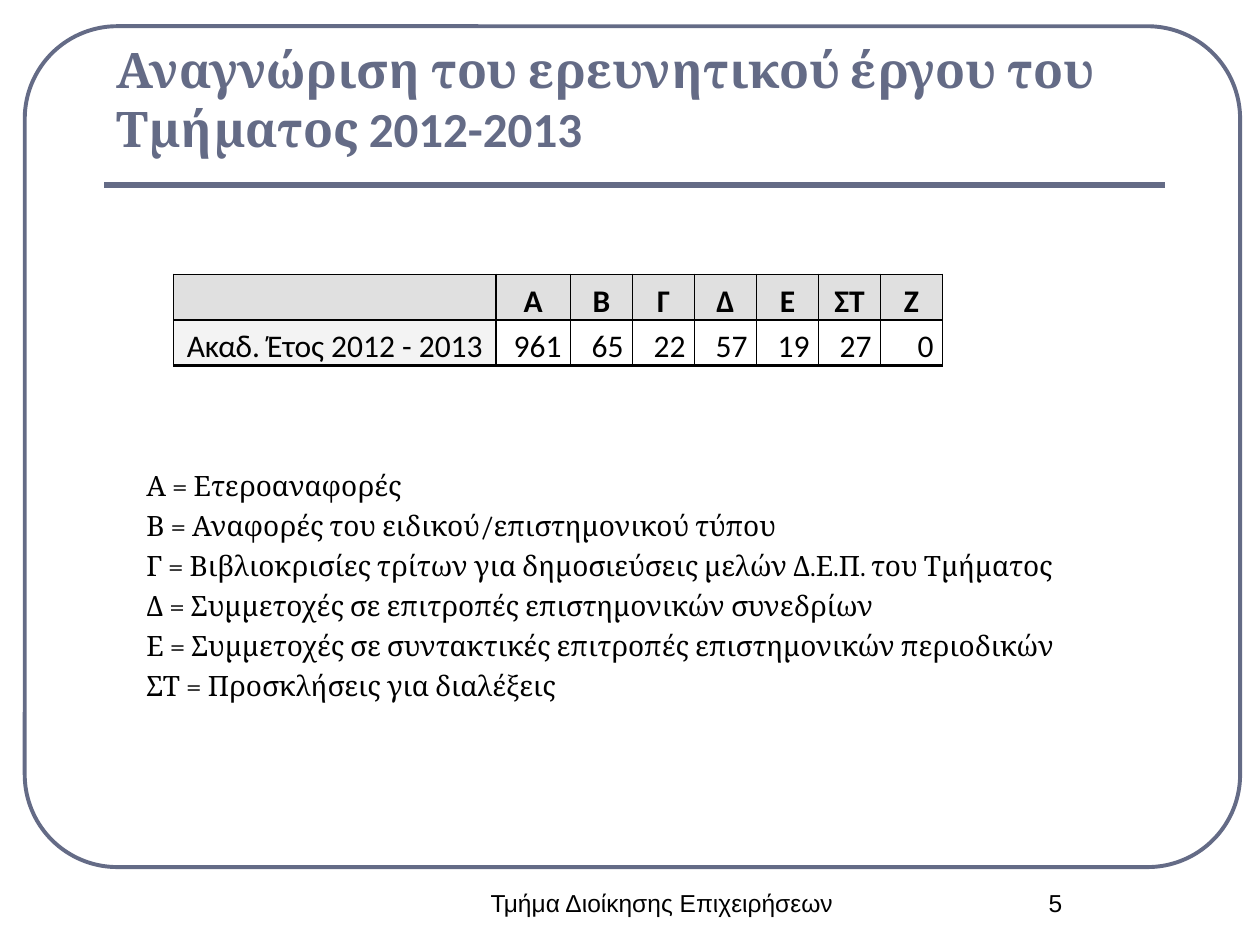
from lxml import etree
from pptx import Presentation
from pptx.dml.color import RGBColor
from pptx.enum.shapes import MSO_CONNECTOR, MSO_SHAPE
from pptx.enum.text import MSO_ANCHOR, PP_ALIGN
from pptx.oxml.ns import qn
from pptx.util import Cm, Pt

SLATE = RGBColor(0x64, 0x6B, 0x86)
BLACK = RGBColor(0, 0, 0)
HEADER_GREY = RGBColor(0xE0, 0xE0, 0xE0)
LABEL_GREY = RGBColor(0xF3, 0xF3, 0xF3)
WHITE = RGBColor(0xFF, 0xFF, 0xFF)
LEFT, CENTER, RIGHT = PP_ALIGN.LEFT, PP_ALIGN.CENTER, PP_ALIGN.RIGHT
TOP, MIDDLE, BOTTOM = MSO_ANCHOR.TOP, MSO_ANCHOR.MIDDLE, MSO_ANCHOR.BOTTOM

HEADERS = ["", "Α", "Β", "Γ", "Δ", "Ε", "ΣΤ", "Ζ"]
VALUES = ["Ακαδ. Έτος 2012 - 2013", "961", "65", "22", "57", "19", "27", "0"]
COL_WIDTHS = [6.5, 1.5] + [1.25] * 6
LEGEND = [
    "Α = Ετεροαναφορές",
    "Β = Αναφορές του ειδικού/επιστημονικού τύπου",
    "Γ = Βιβλιοκρισίες τρίτων για δημοσιεύσεις μελών Δ.Ε.Π. του Τμήματος",
    "Δ = Συμμετοχές σε επιτροπές επιστημονικών συνεδρίων",
    "Ε = Συμμετοχές σε συντακτικές επιτροπές επιστημονικών περιοδικών",
    "ΣΤ = Προσκλήσεις για διαλέξεις",
]


def add_text(p, text, font="Arial", size=14, color=BLACK, bold=False, align=LEFT,
             before=0, after=0, spacing=1.0):
    p.alignment = align
    p.space_before, p.space_after = Pt(before), Pt(after)
    p.line_spacing = spacing
    r = p.add_run()
    r.text = text
    r.font.name, r.font.size = font, Pt(size)
    r.font.bold, r.font.color.rgb = bold, color


def set_borders(cell, bottom):
    """Draw black cell borders, 1 pt except for the bottom one."""
    tc_pr = cell._tc.get_or_add_tcPr()
    for i, side in enumerate("LRTB"):
        width = bottom if side == "B" else 1
        ln = etree.Element(qn(f"a:ln{side}"), w=str(Pt(width)))
        fill = etree.SubElement(ln, qn("a:solidFill"))
        etree.SubElement(fill, qn("a:srgbClr"), val=str(BLACK))
        tc_pr.insert(i, ln)


class SlideBuilder:
    """Places styled elements on one slide; lengths are centimetres."""

    def __init__(self, slide, accent):
        self.shapes = slide.shapes
        self.accent = accent

    def frame(self, x, y, w, h, radius, weight):
        sp = self.shapes.add_shape(MSO_SHAPE.ROUNDED_RECTANGLE, Cm(x), Cm(y), Cm(w), Cm(h))
        sp.adjustments[0] = radius
        sp.shadow.inherit = False
        sp.fill.background()
        sp.line.color.rgb, sp.line.width = self.accent, Pt(weight)

    def rule(self, x1, x2, y, weight):
        line = self.shapes.add_connector(MSO_CONNECTOR.STRAIGHT, Cm(x1), Cm(y), Cm(x2), Cm(y))
        line.line.color.rgb, line.line.width = self.accent, Pt(weight)
        etree.SubElement(line._element.spPr, qn("a:effectLst"))

    def textbox(self, x, y, w, h, anchor=TOP):
        tf = self.shapes.add_textbox(Cm(x), Cm(y), Cm(w), Cm(h)).text_frame
        tf.word_wrap = True
        tf.vertical_anchor = anchor
        return tf

    def title(self, x, y, w, h, parts):
        p = self.textbox(x, y, w, h, BOTTOM).paragraphs[0]
        for text, font in parts:
            add_text(p, text, font=font, size=28, color=self.accent, bold=True)

    def legend(self, x, y, w, h, lines):
        tf = self.textbox(x, y, w, h)
        for i, text in enumerate(lines):
            p = tf.add_paragraph() if i else tf.paragraphs[0]
            add_text(p, text, font="Cambria", size=16, before=3.7)
            p_pr = p._p.get_or_add_pPr()
            p_pr.set("marL", str(Cm(0.95)))
            p_pr.set("indent", str(-Cm(0.95)))

    def footer(self, x, y, w, h, text):
        add_text(self.textbox(x, y, w, h).paragraphs[0], text, align=CENTER)

    def cell(self, cell, text, fill, anchor, bottom, **text_format):
        cell.fill.solid()
        cell.fill.fore_color.rgb = fill
        cell.vertical_anchor = anchor
        cell.margin_left = cell.margin_right = Cm(0.18)
        cell.margin_top = cell.margin_bottom = 0
        set_borders(cell, bottom)
        if text:
            add_text(cell.text_frame.paragraphs[0], text, font="Calibri", size=18,
                     spacing=1.2, **text_format)

    def table(self, x, y, h, widths, headers, values):
        table = self.shapes.add_table(2, len(widths), Cm(x), Cm(y),
                                      Cm(sum(widths)), Cm(h)).table
        for i, (width, header, value) in enumerate(zip(widths, headers, values)):
            table.columns[i].width = Cm(width)
            self.cell(table.cell(0, i), header, HEADER_GREY, MIDDLE, 1,
                      bold=True, align=CENTER, before=2, after=2)
            if i == 0:
                self.cell(table.cell(1, i), value, LABEL_GREY, TOP, 1.5,
                          align=CENTER, before=2, after=2)
            else:
                self.cell(table.cell(1, i), value, WHITE, BOTTOM, 1.5,
                          align=RIGHT, before=3, after=3)


def main():
    prs = Presentation()
    prs.slide_width, prs.slide_height = Cm(25.4), Cm(19.05)
    builder = SlideBuilder(prs.slides.add_slide(prs.slide_layouts[6]), SLATE)

    builder.frame(0.5, 0.53, 24.5, 16.95, radius=0.11, weight=2.25)
    builder.rule(2.1, 23.48, 3.73, weight=3)
    builder.title(2.1, 0.92, 21.4, 2.38, [
        ("Αναγνώριση του ερευνητικού έργου του Τμήματος ", "Cambria"),
        ("2012-2013", "Calibri"),
    ])
    builder.legend(2.7, 9.32, 21.4, 6.2, LEGEND)
    builder.footer(9.32, 17.78, 8.05, 1.27, "Τμήμα Διοίκησης Επιχειρήσεων")
    builder.footer(19.05, 17.78, 4.45, 1.27, "5")
    builder.table(3.5, 5.53, 1.84, COL_WIDTHS, HEADERS, VALUES)

    prs.save("out.pptx")


if __name__ == "__main__":
    main()
